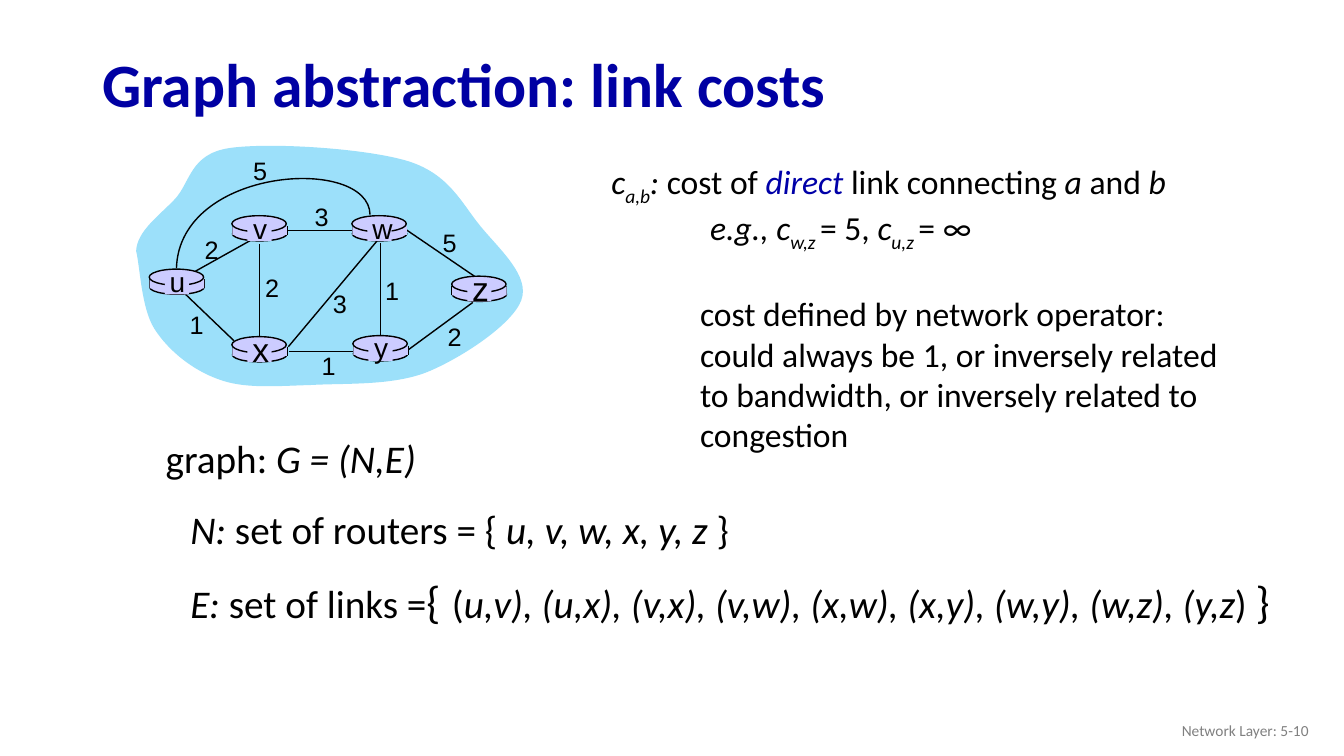
from pptx import Presentation
from pptx.dml.color import RGBColor
from pptx.enum.shapes import MSO_CONNECTOR as Connector, MSO_SHAPE as Shape
from pptx.enum.text import MSO_ANCHOR as Anchor, PP_ALIGN as Align
from pptx.oxml.ns import qn
from pptx.util import Inches, Pt

CELL = 0.1  # grid cell in inches: columns and rows are equal
BLACK, NAVY, DIRECT, GREY = "000000", "0000A3", "0000A8", "808080"
CLOUD, ROUTER = "9CE0FA", "CCCCFF"


def color(hex_string):
    return RGBColor.from_string(hex_string)


def grid(*cells):
    return [Inches(cell * CELL) for cell in cells]


class Canvas:
    def __init__(self, slide, font="Calibri", label_font="Arial", stroke=1):
        self.shapes = slide.shapes
        self.font, self.label_font, self.stroke = font, label_font, stroke

    def finish(self, shape, fill=None, outlined=False):
        shape.shadow.inherit = False
        if fill:
            shape.fill.solid()
            shape.fill.fore_color.rgb = color(fill)
        else:
            shape.fill.background()
        if outlined:
            shape.line.color.rgb = color(BLACK)
            shape.line.width = Pt(self.stroke)
        else:
            shape.line.fill.background()

    def block(self, kind, x, y, w, h, fill, outlined=False):
        self.finish(self.shapes.add_shape(kind, *grid(x, y, w, h)), fill, outlined)

    def line(self, start, end):
        link = self.shapes.add_connector(Connector.STRAIGHT, *grid(*start, *end))
        link.line.color.rgb = color(BLACK)
        link.line.width = Pt(self.stroke)
        properties = link._element.spPr
        properties.append(properties.makeelement(qn("a:effectLst"), {}))

    def curve(self, start, *segments, fill=None, outlined=False, close=False):
        """Joined cubic curves; each segment is two handles and an end."""
        builder = self.shapes.build_freeform(*grid(*start))
        builder.add_line_segments([grid(*point) for segment in segments for point in segment],
                                  close=close)
        shape = builder.convert_to_shape()
        steps = list(shape._element.iter(qn("a:lnTo")))
        for first in range(0, len(steps), 3):
            bend = steps[first].makeelement(qn("a:cubicBezTo"), {})
            steps[first].addprevious(bend)
            for step in steps[first:first + 3]:
                bend.append(step[0])
                step.getparent().remove(step)
        self.finish(shape, fill, outlined)

    def text(self, x, y, w, h, *paragraphs, size, anchor=Anchor.TOP, align=Align.LEFT,
             ink=BLACK, bold=False, font=None, spacing=None, wrap=True):
        """Paragraphs are lists of (text, flags, size); flags: i italic, s subscript, d direct."""
        frame = self.shapes.add_textbox(*grid(x, y, w, h)).text_frame
        frame.word_wrap, frame.vertical_anchor = wrap, anchor
        for index, runs in enumerate(paragraphs):
            paragraph = frame.add_paragraph() if index else frame.paragraphs[0]
            paragraph.alignment, paragraph.line_spacing = align, spacing
            paragraph.font.name, paragraph.font.size = font or self.font, Pt(size)
            paragraph.font.bold = bold
            paragraph.font.color.rgb = color(ink)
            for words, flags, *own_size in runs:
                run = paragraph.add_run()
                run.text = words
                if "i" in flags:
                    run.font.italic = True
                if "s" in flags:
                    run.font._element.set("baseline", "-25000")
                if "d" in flags:
                    run.font.color.rgb = color(DIRECT)
                if own_size:
                    run.font.size = Pt(own_size[0])
        return frame.paragraphs

    def label(self, x, y, words, size):
        """Text centred on a point."""
        w, h = 3.5, 1 + size / 6
        self.text(x - w / 2, y - h / 2, w, h, [(words, "")], size=size, font=self.label_font,
                  anchor=Anchor.MIDDLE, align=Align.CENTER, wrap=False)

    def router(self, name, x, y, size):
        w = 5.4
        self.block(Shape.OVAL, x + 0.05, y + 1.1, w, 1.4, ROUTER, True)
        for side in (x + 0.05, x + 0.05 + w):
            self.line((side, y + 1), (side, y + 1.9))
        self.block(Shape.RECTANGLE, x + 0.05, y + 1, w, 0.9, ROUTER)
        self.block(Shape.OVAL, x, y, w, 1.6, ROUTER, True)
        self.block(Shape.RECTANGLE, x + 1.55, y + 0.2, 2.4, 2.3, ROUTER)
        self.label(x + 2.8, y + 1.2, name, size)


deck = Presentation()
deck.slide_width, deck.slide_height = Inches(13.33), Inches(7.5)
canvas = Canvas(deck.slides.add_slide(deck.slide_layouts[6]))

# Title and footer
canvas.text(9.15, 3.8, 75, 9.8, [("Graph abstraction: link costs", "")], size=44, bold=True,
            ink=NAVY, anchor=Anchor.MIDDLE, spacing=0.9)
canvas.text(100.8, 70.5, 30, 4, [("Network Layer: 5-10", "")], size=11, ink=GREY,
            anchor=Anchor.MIDDLE, align=Align.RIGHT)

# Network cloud
canvas.curve(
    (13.5, 24.9),
    ((13.6, 22.9), (15.8, 21.4), (17.4, 19.7)),
    ((18.9, 18), (18.9, 15.3), (22.7, 14.7)),
    ((26.6, 14.1), (36.3, 14.7), (40.5, 16)),
    ((44.6, 17.3), (45.8, 20.2), (47.7, 22.5)),
    ((49.6, 24.8), (52.6, 27.4), (51.7, 29.8)),
    ((50.8, 32.2), (45.8, 35.5), (42.4, 36.9)),
    ((38.9, 38.3), (34.2, 38), (30.8, 38.2)),
    ((27.3, 38.3), (24.2, 38.6), (21.6, 37.6)),
    ((19.1, 36.7), (16.7, 34.8), (15.3, 32.6)),
    ((14, 30.5), (13.9, 26.5), (13.5, 24.9)), fill=CLOUD)

# Links: start, end, cost, centre of the cost
links = [
    ((19.4, 26.9), (25.3, 23.6), "2", (21, 24.7)),   # u-v
    ((18.4, 29.2), (23.2, 33.8), "1", (19.5, 32.2)),  # u-x
    ((25.75, 24.2), (25.75, 33.5), "2", (27, 28.5)),  # v-x
    ((28.6, 22.85), (35, 22.85), "3", (31.9, 21.5)),  # v-w
    ((28.6, 34.4), (37.4, 23.9), "3", (33.7, 30.1)),  # x-w
    ((28.7, 34.9), (35.1, 34.9), "1", (32.6, 36.3)),  # x-y
    ((37.75, 24.1), (37.75, 33.2), "1", (38.9, 28.8)),  # w-y
    ((40.3, 22.8), (47.2, 27.5), "5", (44.6, 24.1)),  # w-z
    ((40.5, 34.7), (46.9, 30), "2", (45.1, 33.4)),   # y-z
]
for start, end, *_ in links:
    canvas.line(start, end)
canvas.curve((36.7, 21.3), ((36.6, 15.4), (17.8, 16.5), (17.5, 26.6)), outlined=True)

# Routers and link costs
for router in [("u", 14.8, 26.7, 20), ("x", 23, 33.4, 24), ("v", 23, 21.4, 20),
               ("w", 34.9, 21.4, 20), ("y", 35, 33.3, 20), ("z", 44.8, 27.4, 24)]:
    canvas.router(*router)
for *_, cost, centre in links:
    canvas.label(*centre, cost, 18)
canvas.label(25.8, 16.9, "5", 18)  # u-w

# Cost definition
_, example, operator = canvas.text(
    59.65, 15.5, 64.4, 29.3,
    [("c", "i"), ("a,b", "is"), (": ", "i"), ("cost of ", ""), ("direct", "id"),
     (" link connecting ", ""), ("a", "i"), (" and ", ""), ("b", "i")],
    [("e.g., c", "i"), ("w,z ", "is"), ("= 5, ", ""), ("c", "i"), ("u,z ", "is"), ("= ∞", "")],
    [("cost defined by network operator: could always be 1, or inversely related to "
      "bandwidth, or inversely related to congestion", "")], size=24)
example._p.get_or_add_pPr().set("marL", str(Inches(0.98)))
operator._p.get_or_add_pPr().set("marL", str(Inches(0.88)))
operator.space_before = Pt(28.7)

# Graph, its routers and its links
canvas.text(15.45, 42.6, 35, 6, [("graph: ", ""), ("G = (N,E)", "i")], size=28)
canvas.text(17.9, 49.6, 60, 5.7,
            [("N: ", "i"), ("set of routers = { ", ""), ("u, v, w, x, y, z ", "i"), ("}", "")],
            size=28)
canvas.text(17.9, 55.85, 114, 7.1,
            [("E: ", "i"), ("set of links =", ""), ("{", "", 32), (" ", "", 36), ("(", ""),
             ("u,v), (u,x), (v,x), (v,w), (x,w), (x,y), (w,y), (w,z), (y,z", "i"),
             (") ", ""), ("}", "", 32)], size=28)

deck.save("out.pptx")
